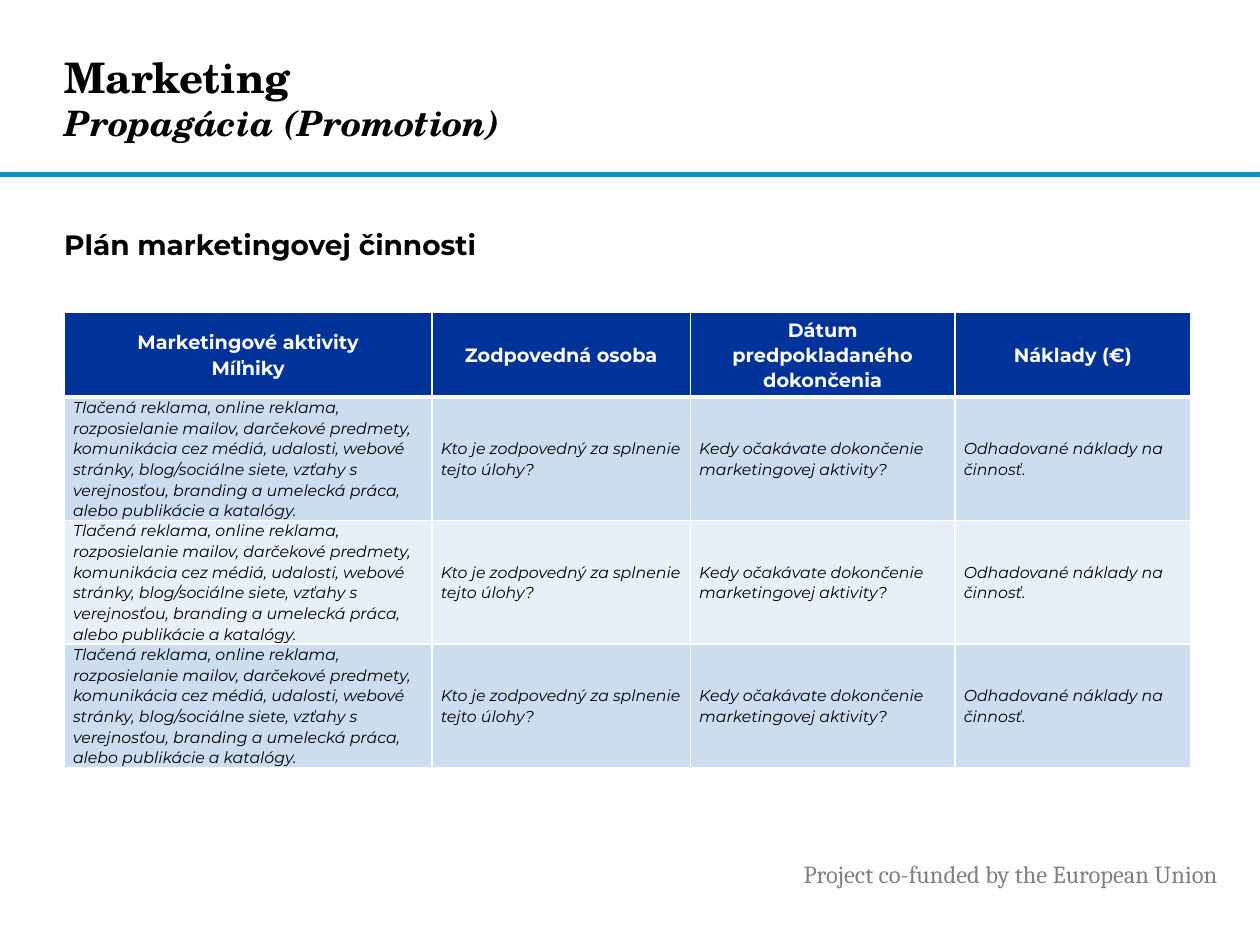
import pptx
import pptx.dml.color
import pptx.enum.shapes
import pptx.enum.text
import pptx.util
from dataclasses import dataclass
from lxml import etree

Pt = pptx.util.Pt
Align = pptx.enum.text.PP_ALIGN
Anchor = pptx.enum.text.MSO_ANCHOR
Fit = pptx.enum.text.MSO_AUTO_SIZE
NS = "http://schemas.openxmlformats.org/drawingml/2006/main"


@dataclass(frozen=True)
class Theme:
    # Colours
    ink: str = "000000"
    paper: str = "FFFFFF"
    gray: str = "808080"
    bar: str = "0C94B7"
    edge: str = "0096D3"
    head: str = "003399"
    bands: tuple = ("CCDDEF", "E7EFF7")
    # Fonts
    serif: str = "TeX Gyre Schola"
    sans: str = "Montserrat"
    foot: str = "Cambria"
    # Type sizes
    title: int = 24
    sub: int = 20
    lead: int = 16
    note: int = 14
    label: int = 11
    cell: int = 9


def rgb(code):
    return pptx.dml.color.RGBColor.from_string(code)


def style(font, name, size, color, bold=False, italic=False):
    font.name, font.size = name, Pt(size)
    font.bold, font.italic = bold, italic
    font.color.rgb = rgb(color)


class Deck:
    """Lengths are given on a grid of 100 columns by 75 rows."""

    def __init__(self, theme):
        self.theme = theme
        self.file = pptx.Presentation()
        self.file.slide_width = pptx.util.Inches(10)
        self.file.slide_height = pptx.util.Inches(7.5)
        self.slide = self.file.slides.add_slide(self.file.slide_layouts[5])

    def col(self, n):
        return round(self.file.slide_width * n / 100)

    def row(self, n):
        return round(self.file.slide_height * n / 75)

    def box(self, x, y, w, h):
        return self.col(x), self.row(y), self.col(w), self.row(h)

    def title(self, place, main, sub):
        t = self.theme
        shape = self.slide.shapes.title
        shape.left, shape.top, shape.width, shape.height = self.box(*place)
        frame = shape.text_frame
        frame.auto_size, frame.vertical_anchor = Fit.NONE, Anchor.MIDDLE
        frame.margin_left = frame.margin_right = 0
        frame.margin_top = frame.margin_bottom = 0
        par = frame.paragraphs[0]
        par.alignment = Align.LEFT
        run = par.add_run()
        run.text = main
        style(run.font, t.serif, t.title, t.ink, True)
        par.add_line_break()
        run = par.add_run()
        run.text = sub
        style(run.font, t.serif, t.sub, t.ink, True, True)

    def rule(self, place):
        kind = pptx.enum.shapes.MSO_SHAPE.RECTANGLE
        bar = self.slide.shapes.add_shape(kind, *self.box(*place))
        bar.shadow.inherit = False
        bar.fill.solid()
        bar.fill.fore_color.rgb = rgb(self.theme.bar)
        bar.line.color.rgb = rgb(self.theme.edge)
        bar.line.width = Pt(1)

    def text(self, place, words, look, side=None, after=0, fit=Fit.NONE):
        frame = self.slide.shapes.add_textbox(*self.box(*place)).text_frame
        frame.word_wrap, frame.auto_size = True, fit
        if side is not None:
            frame.margin_left = frame.margin_right = self.col(side)
        par = frame.paragraphs[0]
        par.text, par.space_after = words, Pt(after)
        style(par.font, *look)

    def cell(self, cell, words, look, fill, align, top, low):
        cell.vertical_anchor = Anchor.MIDDLE
        cell.margin_left = cell.margin_right = self.col(0.7)
        cell.margin_top = cell.margin_bottom = 0
        cell.text = words
        pars = cell.text_frame.paragraphs
        for par in pars:
            par.alignment, par.line_spacing = align, 1.07
            style(par.font, *look)
        pars[-1].space_after = Pt(8)
        # Borders come before the fill in the cell properties
        props = cell._tc.get_or_add_tcPr()
        for tag, wide in (("lnL", 1), ("lnR", 1), ("lnT", top), ("lnB", low)):
            line = etree.SubElement(props, f"{{{NS}}}{tag}", w=str(Pt(wide)))
            solid = etree.SubElement(line, f"{{{NS}}}solidFill")
            etree.SubElement(solid, f"{{{NS}}}srgbClr", val=self.theme.paper)
        cell.fill.solid()
        cell.fill.fore_color.rgb = rgb(fill)

    def table(self, x, y, cols, rows, data):
        t = self.theme
        place = self.box(x, y, sum(cols), sum(rows))
        grid = self.slide.shapes.add_table(len(rows), len(cols), *place).table
        grid.horz_banding = False
        for c, wide in enumerate(cols):
            grid.columns[c].width = self.col(wide)
        head = (t.sans, t.label, t.paper, True)
        body = (t.sans, t.cell, t.ink, False, True)
        for r, tall in enumerate(rows):
            grid.rows[r].height = self.row(tall)
            for c, words in enumerate(data[r]):
                cell = grid.cell(r, c)
                if r == 0:
                    self.cell(cell, words, head, t.head, Align.CENTER, 1, 3)
                else:
                    fill = t.bands[(r - 1) % 2]
                    top = 3 if r == 1 else 1
                    self.cell(cell, words, body, fill, Align.LEFT, top, 1)


HEADS = ["Marketingové aktivity\nMíľniky", "Zodpovedná osoba",
         "Dátum predpokladaného dokončenia", "Náklady (€)"]
HINTS = [
    "Tlačená reklama, online reklama, rozposielanie mailov, darčekové "
    "predmety, komunikácia cez médiá, udalosti, webové stránky, "
    "blog/sociálne siete, vzťahy s verejnosťou, branding a umelecká práca, "
    "alebo publikácie a katalógy.",
    "Kto je zodpovedný za splnenie tejto úlohy?",
    "Kedy očakávate dokončenie marketingovej aktivity?",
    "Odhadované náklady na činnosť.",
]


def main():
    t = Theme()
    deck = Deck(t)
    left = 5.1
    # Frame of the slide: rule and footer
    deck.rule((0, 13.7, 100, 0.3))
    deck.text((62.8, 67.7, 36.6, 3.4),
              "Project co-funded by the European Union",
              (t.foot, t.note, t.gray), fit=Fit.SHAPE_TO_FIT_TEXT)
    # Title and lead line
    deck.title((left, 1.8, 72.7, 11.9), "Marketing", "Propagácia (Promotion)")
    deck.text((left, 17.6, 84.9, 50.6), "Plán marketingovej činnosti",
              (t.sans, t.lead, t.ink, True), side=0, after=6)
    # Plan table: one header row and three equal rows
    deck.table(left, 24.8, [29.2, 20.5, 21, 18.7], [6.7] + [9.8] * 3,
               [HEADS] + [HINTS] * 3)
    deck.file.save("out.pptx")


if __name__ == "__main__":
    main()
